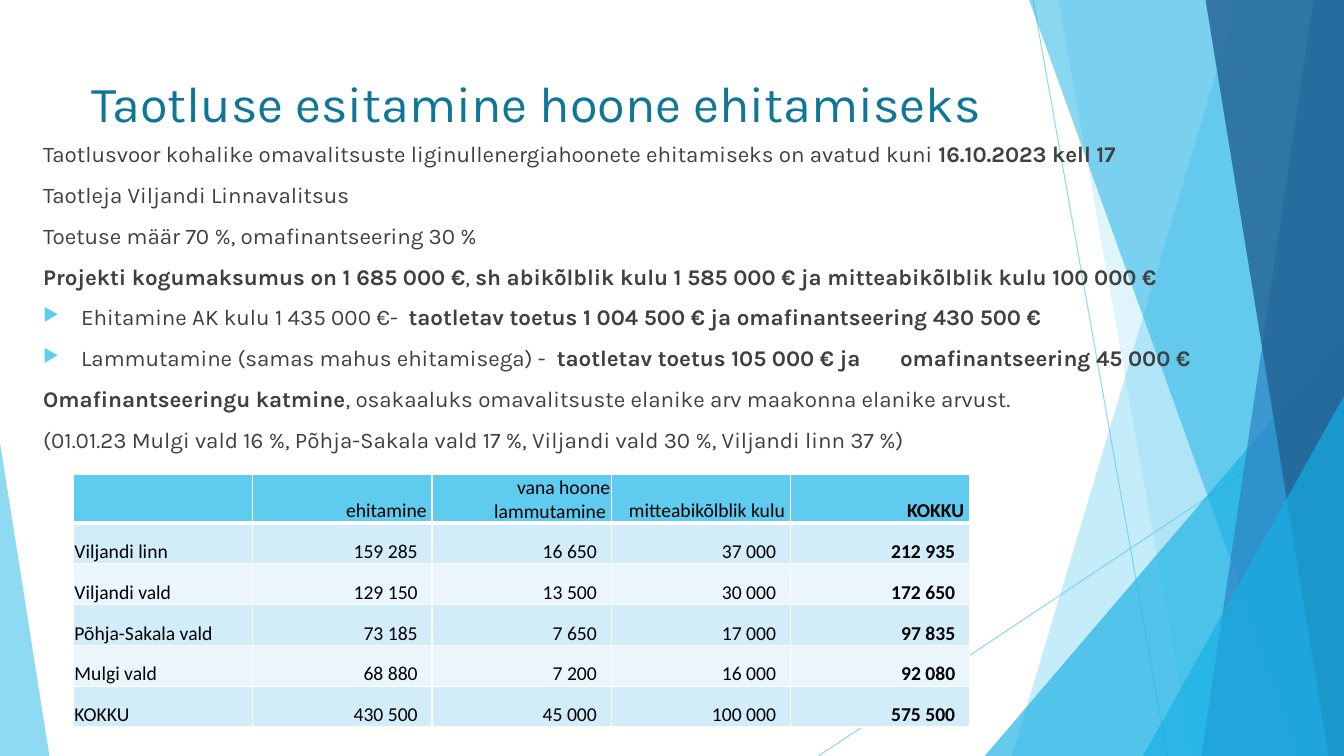
from lxml.etree import SubElement
from pptx import Presentation
from pptx.dml.color import RGBColor
from pptx.enum.shapes import MSO_CONNECTOR, MSO_SHAPE
from pptx.enum.text import MSO_ANCHOR, PP_ALIGN
from pptx.oxml.ns import qn
from pptx.util import Pt

COLORS = {
    "sky": "5FCBEF", "cyan": "17B0E4", "blue": "2E83C3", "navy": "226292",
    "title": "0F7698", "body": "404040", "black": "000000", "white": "FFFFFF",
    "band_dark": "D2ECF9", "band_light": "EAF6FC",
}
WIDTH, HEIGHT = 960, 540
TITLE = "Taotluse esitamine hoone ehitamiseks"

# Body paragraphs: (has bullet, [(text, bold), ...])
BODY = [
    (False, [("Taotlusvoor kohalike omavalitsuste liginullenergiahoonete ehitamiseks on avatud kuni ", False),
             ("16.10.2023 kell 17", True)]),
    (False, [("Taotleja Viljandi Linnavalitsus", False)]),
    (False, [("Toetuse määr 70 %, omafinantseering 30 %", False)]),
    (False, [("Projekti kogumaksumus on 1 685 000 €", True), (", ", False),
             ("sh abikõlblik kulu 1 585 000 € ja mitteabikõlblik kulu 100 000 €", True)]),
    (True, [("Ehitamine AK kulu 1 435 000 €-  ", False),
            ("taotletav toetus 1 004 500 € ja omafinantseering 430 500 €", True)]),
    (True, [("Lammutamine (samas mahus ehitamisega) -  ", False),
            ("taotletav toetus 105 000 € ja \tomafinantseering 45 000 €", True)]),
    (False, [("Omafinantseeringu katmine", True),
             (", osakaaluks omavalitsuste elanike arv maakonna elanike arvust.", False)]),
    (False, [("(01.01.23 Mulgi vald 16 %, Põhja-Sakala vald 17 %, Viljandi vald 30 %, Viljandi linn 37 %)", False)]),
]
TABLE = [
    ("", "ehitamine ", "vana hoone lammutamine ", "mitteabikõlblik kulu ", "KOKKU "),
    ("Viljandi linn", "159 285", "16 650", "37 000", "212 935"),
    ("Viljandi vald", "129 150", "13 500", "30 000", "172 650"),
    ("Põhja-Sakala vald", "73 185", "7 650", "17 000", "97 835"),
    ("Mulgi vald", "68 880", "7 200", "16 000", "92 080"),
    ("KOKKU", "430 500", "45 000", "100 000", "575 500"),
]
COLUMN_WIDTH, HEADER_HEIGHT, ROW_HEIGHT = 128, 34.2, 29.2

# Decoration, back to front
RAYS = [(738, 0, 833.8, HEIGHT), (WIDTH, 290.2, 584.6, HEIGHT)]
# ("band", top x, bottom x, color, opacity) reaches the right edge;
# ("triangle", left, top, width, apex, color, opacity) stands on the bottom edge
FACETS = [
    ("band", 884.2, 722.9, "sky", 36),
    ("band", 756, 851.8, "sky", 20),
    ("triangle", 703.4, 239.8, 256.6, 1, "cyan", 66),
    ("band", 735.1, 929.5, "cyan", 50),
    ("band", 938.2, 858.2, "blue", 70),
    ("band", 861.1, 949, "navy", 80),
    ("triangle", 816.5, 283, 143.5, 1, "cyan", 66),
    ("triangle", 0, 316.1, 35.3, 0, "sky", 70),
]


def rgb(name):
    return RGBColor.from_string(COLORS[name])


def set_opacity(shape, percent):
    color = shape._element.spPr.find(".//" + qn("a:srgbClr"))
    SubElement(color, qn("a:alpha"), val=str(percent * 1000))


def add_run(paragraph, text, font, size, color, bold=False):
    run = paragraph.add_run()
    run.text = text
    run.font.name, run.font.size, run.font.bold = font, Pt(size), bold
    run.font.color.rgb = rgb(color)


def add_text_frame(slide, left, top, width, height):
    frame = slide.shapes.add_textbox(Pt(left), Pt(top), Pt(width), Pt(height)).text_frame
    frame.word_wrap = True
    return frame


def add_bullet(paragraph):
    properties = paragraph._p.get_or_add_pPr()
    properties.set("marL", str(Pt(27)))
    properties.set("indent", str(Pt(-27)))
    properties.set("defTabSz", str(Pt(36)))
    color = SubElement(properties, qn("a:buClr"))
    SubElement(color, qn("a:srgbClr"), val=COLORS["sky"])
    SubElement(properties, qn("a:buSzPct"), val="80000")
    SubElement(properties, qn("a:buChar"), char="▶")


def set_borders(cell, bottom_width):
    properties = cell._tc.get_or_add_tcPr()
    for index, (side, width) in enumerate((("L", 1), ("R", 1), ("T", 1), ("B", bottom_width))):
        line = SubElement(properties, qn("a:ln" + side), w=str(Pt(width)))
        fill = SubElement(line, qn("a:solidFill"))
        SubElement(fill, qn("a:srgbClr"), val=COLORS["white"])
        properties.insert(index, line)


def add_decoration(slide):
    for x1, y1, x2, y2 in RAYS:
        ray = slide.shapes.add_connector(MSO_CONNECTOR.STRAIGHT, Pt(x1), Pt(y1), Pt(x2), Pt(y2))
        ray.line.color.rgb = rgb("sky")
        ray.line.width = Pt(0.75)
        set_opacity(ray, 70)
        SubElement(ray._element.spPr, qn("a:effectLst"))
    for kind, *place, color, opacity in FACETS:
        if kind == "band":
            top_x, bottom_x = place
            builder = slide.shapes.build_freeform(Pt(top_x), Pt(0))
            corners = [(WIDTH, 0), (WIDTH, HEIGHT), (bottom_x, HEIGHT)]
            builder.add_line_segments([(Pt(x), Pt(y)) for x, y in corners], close=True)
            facet = builder.convert_to_shape()
        else:
            left, top, width, apex = place
            facet = slide.shapes.add_shape(MSO_SHAPE.ISOSCELES_TRIANGLE, Pt(left), Pt(top),
                                           Pt(width), Pt(HEIGHT - top))
            facet.adjustments[0] = apex
        facet.shadow.inherit = False
        facet.fill.solid()
        facet.fill.fore_color.rgb = rgb(color)
        facet.line.fill.background()
        set_opacity(facet, opacity)


def add_body(slide):
    frame = add_text_frame(slide, 23.8, 96.5, 922, 430)
    for index, (bulleted, runs) in enumerate(BODY):
        paragraph = frame.add_paragraph() if index else frame.paragraphs[0]
        paragraph.space_before = Pt(10)
        if bulleted:
            add_bullet(paragraph)
        for text, bold in runs:
            add_run(paragraph, text, "Karla", 16, "body", bold)


def add_cost_table(slide):
    rows, columns = len(TABLE), len(TABLE[0])
    height = HEADER_HEIGHT + ROW_HEIGHT * (rows - 1)
    table = slide.shapes.add_table(rows, columns, Pt(52.6), Pt(339.1),
                                   Pt(COLUMN_WIDTH * columns), Pt(height)).table
    for column in table.columns:
        column.width = Pt(COLUMN_WIDTH)
    for row_index, values in enumerate(TABLE):
        header = row_index == 0
        table.rows[row_index].height = Pt(HEADER_HEIGHT if header else ROW_HEIGHT)
        band = "sky" if header else "band_dark" if row_index % 2 else "band_light"
        for column_index, value in enumerate(values):
            cell = table.cell(row_index, column_index)
            number = not header and column_index > 0
            cell.fill.solid()
            cell.fill.fore_color.rgb = rgb(band)
            set_borders(cell, 3 if header else 1)
            cell.vertical_anchor = MSO_ANCHOR.BOTTOM
            cell.margin_left = cell.margin_top = Pt(0.6)
            cell.margin_right = Pt(10.2 if number else 0.6)
            cell.margin_bottom = Pt(0)
            paragraph = cell.text_frame.paragraphs[0]
            paragraph.alignment = PP_ALIGN.RIGHT if column_index else PP_ALIGN.LEFT
            if value:
                add_run(paragraph, value, "Calibri", 14, "black", column_index == columns - 1)


def main():
    presentation = Presentation()
    presentation.slide_width, presentation.slide_height = Pt(WIDTH), Pt(HEIGHT)
    slide = presentation.slides.add_slide(presentation.slide_layouts[6])
    add_decoration(slide)
    title = add_text_frame(slide, 58.3, 48.2, 672, 59)
    add_run(title.paragraphs[0], TITLE, "Karla", 36, "title")
    add_body(slide)
    add_cost_table(slide)
    presentation.save("out.pptx")


if __name__ == "__main__":
    main()
